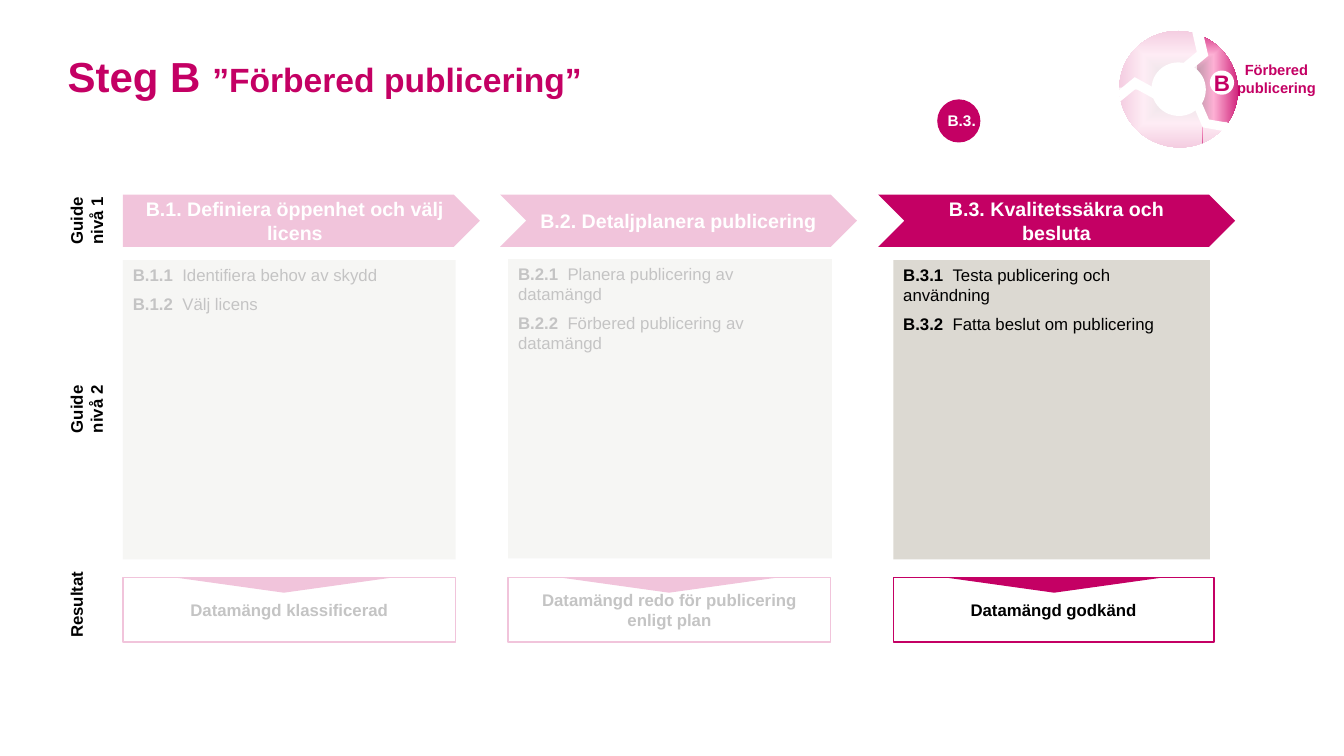
import pptx
import pptx.dml.color
import pptx.enum.shapes
import pptx.enum.text
import pptx.oxml
import pptx.oxml.ns
import pptx.util

PX = 9144  # EMU per px, 100 px to the inch
THEME = {
    "font": "Arial",
    "magenta": "C40064", "sand": "DCD9D2", "white": "FFFFFF", "black": "000000",
    "ring": ((1, "808080"), (45, "FDB0D4"), (85, "C50366")),
    "veil_opacity": 77,
    "title": 30, "subtitle": 24, "badge": 16, "step": 14, "body": 12, "marker": 11, "caption": 10.5,
}
KIND = pptx.enum.shapes.MSO_SHAPE
ALIGN = pptx.enum.text.PP_ALIGN
ANCHOR = pptx.enum.text.MSO_ANCHOR
NAMESPACE = pptx.oxml.ns.nsdecls("a")

presentation = pptx.Presentation()
presentation.slide_width = 1333 * PX
presentation.slide_height = 750 * PX
slide = presentation.slides.add_slide(presentation.slide_layouts[6])


def draw(kind, box, fill=None, line=None, rotation=0):
    """Add a preset shape, or a text box when kind is None."""
    place = [length * PX for length in box]
    if kind is None:
        shape = slide.shapes.add_textbox(*place)
    else:
        shape = slide.shapes.add_shape(kind, *place)
        shape.shadow.inherit = False
        if fill:
            shape.fill.solid()
            shape.fill.fore_color.rgb = pptx.dml.color.RGBColor.from_string(THEME[fill])
        else:
            shape.fill.background()
        if line:
            shape.line.color.rgb = pptx.dml.color.RGBColor.from_string(THEME[fill or "magenta"])
            shape.line.width = pptx.util.Pt(line)
        else:
            shape.line.fill.background()
    shape.rotation = rotation
    return shape


def write(shape, paragraphs, size, color="black", align=ALIGN.CENTER, anchor=ANCHOR.MIDDLE, inset=True):
    """Fill a shape with paragraphs; each is a list of (text, bold, size) runs."""
    frame = shape.text_frame
    frame.word_wrap = True
    frame.vertical_anchor = anchor
    if not inset:
        frame.margin_left = frame.margin_right = frame.margin_top = frame.margin_bottom = 0
    for index, runs in enumerate(paragraphs):
        paragraph = frame.add_paragraph() if index else frame.paragraphs[0]
        paragraph.alignment = align
        if len(runs) > 1 and index:
            paragraph.space_before = pptx.util.Pt(6)
        if any("\t" in text for text, bold, run_size in runs):
            paragraph._p.get_or_add_pPr().append(pptx.oxml.parse_xml(
                f'<a:tabLst {NAMESPACE}><a:tab pos="{49 * PX}" algn="l"/></a:tabLst>'))
        paragraph.font.name = THEME["font"]
        paragraph.font.size = pptx.util.Pt(THEME[size])
        paragraph.font.color.rgb = pptx.dml.color.RGBColor.from_string(THEME[color])
        paragraph.font.bold = True
        for text, bold, run_size in runs:
            run = paragraph.add_run()
            run.text = text
            if not bold:
                run.font.bold = False
            if run_size != size:
                run.font.size = pptx.util.Pt(THEME[run_size])


# Title
write(draw(None, (67, 50, 1042, 91)),
      [[("Steg B ", True, "title"), ("”Förbered publicering”", True, "subtitle")]],
      "title", "magenta", ALIGN.LEFT, ANCHOR.TOP, inset=False)

# Three steps: arrow, list of activities, result
STEPS = [
    (122, 330, 258, 330, KIND.PENTAGON, "B.1. Definiera öppenhet och välj licens",
     [("B.1.1", "Identifiera behov av skydd"), ("B.1.2", "Välj licens")],
     "Datamängd klassificerad"),
    (504, 321, 257, 320, KIND.CHEVRON, "B.2. Detaljplanera publicering",
     [("B.2.1", "Planera publicering av datamängd"), ("B.2.2", "Förbered publicering av datamängd")],
     "Datamängd redo för publicering enligt plan"),
    (886, 314, 258, 318, KIND.CHEVRON, "B.3. Kvalitetssäkra och besluta",
     [("B.3.1", "Testa publicering och användning"), ("B.3.2", "Fatta beslut om publicering")],
     "Datamängd godkänd"),
]
for index, (left, list_width, list_top, result_width, arrow, heading, activities, result) in enumerate(STEPS):
    write(draw(KIND.RECTANGLE, (left, list_top, list_width, 297), "sand"),
          [[(number + "\t", True, "body"), (activity, False, "body")] for number, activity in activities],
          "body", align=ALIGN.LEFT, anchor=ANCHOR.TOP)
    write(draw(arrow, (122 + round(374.5 * index), 193, 354, 52), "magenta"),
          [[(heading, True, "step")]], "step", "white")
    write(draw(KIND.RECTANGLE, (left, 573, result_width, 64), line=1),
          [[(result, True, "body")]], "body")
    draw(KIND.ISOSCELES_TRIANGLE, (left + 52, 573, 215, 15), "magenta", rotation=180)

# Process ring with its gaps
ring = draw(KIND.OVAL, (1110, 31, 118, 115), "magenta", rotation=22.7)
stops = "".join(f'<a:gs pos="{position * 1000}"><a:srgbClr val="{color}"/></a:gs>'
                for position, color in THEME["ring"])
solid = ring._element.spPr.find(pptx.oxml.ns.qn("a:solidFill"))
solid.getparent().replace(solid, pptx.oxml.parse_xml(
    f'<a:gradFill {NAMESPACE} rotWithShape="1"><a:gsLst>{stops}</a:gsLst><a:path path="shape">'
    '<a:fillToRect l="50000" t="50000" r="50000" b="50000"/></a:path></a:gradFill>'))
draw(KIND.OVAL, (1142, 62, 54, 53), "white", rotation=22.7)
for gap, rotation in [((1115, 71, 23, 34), 264.7), ((1175, 32, 24, 39), 18.7), ((1189, 100, 20, 37), 128.4)]:
    draw(KIND.CHEVRON, gap, "white", rotation=rotation)
write(draw(KIND.OVAL, (1200, 70, 24, 24), "white"),
      [[("B", True, "badge")]], "badge", "magenta", inset=False)
write(draw(None, (1204, 50, 124, 56)),
      [[("Förbered publicering", True, "caption")]], "caption", "magenta")

# Veils that fade the other ring segments and the first two steps
for box, rotation in [((1092, 87, 100, 65), 0), ((1104, 6, 70, 96), 90),
                      ((1182, 132, 46, 24), 90), ((110, 158, 745, 498), 0)]:
    veil = draw(KIND.RECTANGLE, box, "white", rotation=rotation)
    color = veil._element.spPr.find(".//" + pptx.oxml.ns.qn("a:srgbClr"))
    color.append(pptx.oxml.parse_xml(f'<a:alpha {NAMESPACE} val="{THEME["veil_opacity"] * 1000}"/>'))

# Marker of the current step
draw(KIND.OVAL, (931, 100, 40, 40), "magenta", line=2)
write(draw(None, (930, 105, 60, 29)), [[("B.3.", True, "marker")]],
      "marker", "white", ALIGN.LEFT, ANCHOR.TOP)

# Row labels, turned to read upwards
for box, lines in [((47, 197, 81, 44), ["Guide nivå 1"]),
                   ((-61, 384, 297, 44), ["Guide", "nivå 2"]),
                   ((37, 578, 101, 44), ["Resultat"])]:
    write(draw(None, box, rotation=270), [[(line, True, "body")] for line in lines],
          "body", anchor=ANCHOR.TOP, inset=False)

presentation.save("out.pptx")
